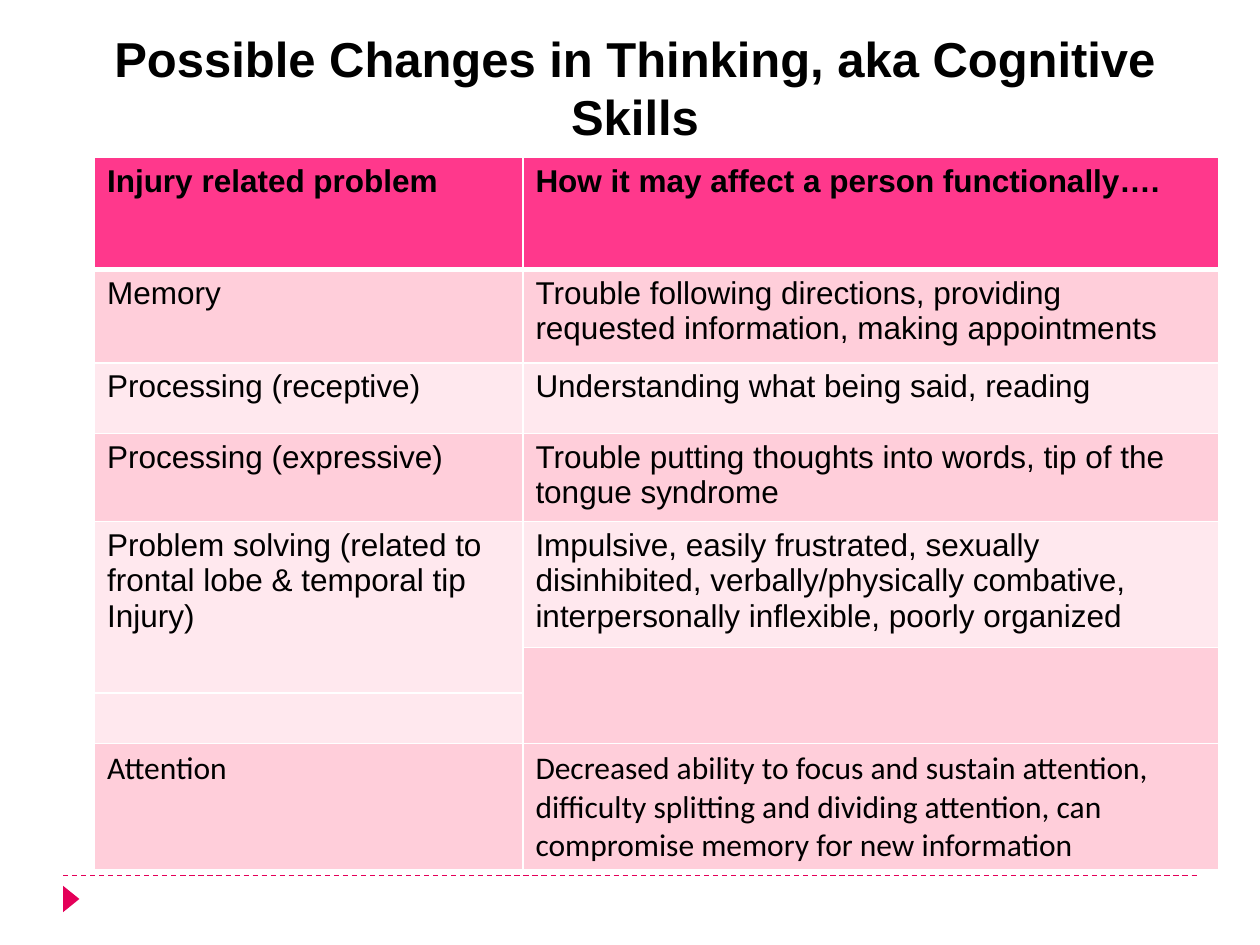
from pptx import Presentation
from pptx.dml.color import RGBColor
from pptx.enum.dml import MSO_LINE
from pptx.enum.shapes import MSO_CONNECTOR, MSO_SHAPE
from pptx.enum.text import MSO_ANCHOR, PP_ALIGN
from pptx.oxml.ns import qn
from pptx.util import Inches, Pt
from lxml import etree

DASH = MSO_LINE.DASH
STRAIGHT = MSO_CONNECTOR.STRAIGHT
TRIANGLE = MSO_SHAPE.ISOSCELES_TRIANGLE
MIDDLE = MSO_ANCHOR.MIDDLE
CENTER = PP_ALIGN.CENTER

COLORS = {
    "accent": "E40059",
    "header": "FF388C",
    "dark": "FFCEDA",
    "light": "FFE8EE",
    "text": "000000",
    "border": "FFFFFF",
}
COLUMNS = [3.4, 5.52]
ROWS = [
    (0.89, "Injury related problem", "How it may affect a person functionally…."),
    (0.74, "Memory",
     "Trouble following directions, providing requested information, making appointments"),
    (0.56, "Processing (receptive)", "Understanding what being said, reading"),
    (0.7, "Processing (expressive)",
     "Trouble putting thoughts into words, tip of the tongue syndrome"),
    (1.0, "Problem solving (related to frontal lobe & temporal tip\nInjury)",
     "Impulsive, easily frustrated, sexually disinhibited, verbally/physically "
     "combative, interpersonally inflexible, poorly organized"),
    (0.36, "", ""),
    (0.4, "", ""),
    (1.0, "Attention",
     "Decreased ability to focus and sustain attention, difficulty splitting and "
     "dividing attention, can compromise memory for new information"),
]
ROW_FILLS = ["header", "dark", "light", "dark", "light", "dark", "light", "dark"]
MERGES = [((4, 0), (5, 0)), ((5, 1), (6, 1))]


def color(name):
    """Return the named colour as an RGB value."""
    return RGBColor.from_string(COLORS[name])


def write(para, text, size, font="Arial", bold=False):
    """Add one styled run to a paragraph."""
    span = para.add_run()
    span.text = text
    span.font.size = Pt(size)
    span.font.name = font
    span.font.bold = bold
    span.font.color.rgb = color("text")


def set_borders(cell, bottom):
    """Give a cell white borders, with its own width at the bottom."""
    props = cell._tc.get_or_add_tcPr()
    for index, (side, width) in enumerate(
            [("L", 1), ("R", 1), ("T", 1), ("B", bottom)]):
        line = etree.Element(qn(f"a:ln{side}"), w=str(Pt(width)))
        fill = etree.SubElement(line, qn("a:solidFill"))
        etree.SubElement(fill, qn("a:srgbClr"), val=COLORS["border"])
        props.insert(index, line)


def add_title(page, left, top, width, height):
    """Place the centred title."""
    box = page.shapes.add_textbox(left, top, width, height)
    frame = box.text_frame
    frame.word_wrap = True
    frame.vertical_anchor = MIDDLE
    para = frame.paragraphs[0]
    para.alignment = CENTER
    write(para, "Possible Changes in Thinking, aka Cognitive Skills", 28, bold=True)


def fill_cell(cell, text, fill, font, is_header):
    """Write the text of a cell and set its fill and borders."""
    cell.fill.solid()
    cell.fill.fore_color.rgb = color(fill)
    set_borders(cell, 3 if is_header else 1)
    frame = cell.text_frame
    for index, line in enumerate(text.split("\n")):
        para = frame.add_paragraph() if index else frame.paragraphs[0]
        if line:
            write(para, line, 18, font, is_header)


def add_skills_table(page, left, top, width, height):
    """Place the table of problems and their effects."""
    frame = page.shapes.add_table(len(ROWS), len(COLUMNS), left, top, width, height)
    table = frame.table
    for column, size in zip(table.columns, COLUMNS):
        column.width = Inches(size)
    for row, (size, *texts) in enumerate(ROWS):
        table.rows[row].height = Inches(size)
        font = "Calibri" if row == len(ROWS) - 1 else "Arial"
        for col, text in enumerate(texts):
            fill_cell(table.cell(row, col), text, ROW_FILLS[row], font, row == 0)
    for start, end in MERGES:
        table.cell(*start).merge(table.cell(*end))


def add_footer(page, left, top, width):
    """Place the dashed rule and the pointer below it."""
    rule = page.shapes.add_connector(STRAIGHT, left, top, left + width, top)
    rule.line.color.rgb = color("accent")
    rule.line.width = Pt(0.75)
    rule.line.dash_style = DASH
    etree.SubElement(rule._element.spPr, qn("a:effectLst"))
    pointer = page.shapes.add_shape(
        TRIANGLE, left - Inches(0.04), top + Inches(0.12), Inches(0.21), Inches(0.13))
    pointer.rotation = 90
    pointer.shadow.inherit = False
    pointer.fill.solid()
    pointer.fill.fore_color.rgb = color("accent")
    pointer.line.fill.background()


def main():
    """Build and save the slide."""
    deck = Presentation()
    deck.slide_width, deck.slide_height = Inches(10), Inches(7.5)
    page = deck.slides.add_slide(deck.slide_layouts[6])
    add_footer(page, Inches(0.5), Inches(6.95), Inches(9))
    add_title(page, Inches(0.58), Inches(0.17), Inches(8.92), Inches(1.04))
    add_skills_table(page, Inches(0.75), Inches(1.25), Inches(8.92), Inches(5.65))
    deck.save("out.pptx")


if __name__ == "__main__":
    main()
